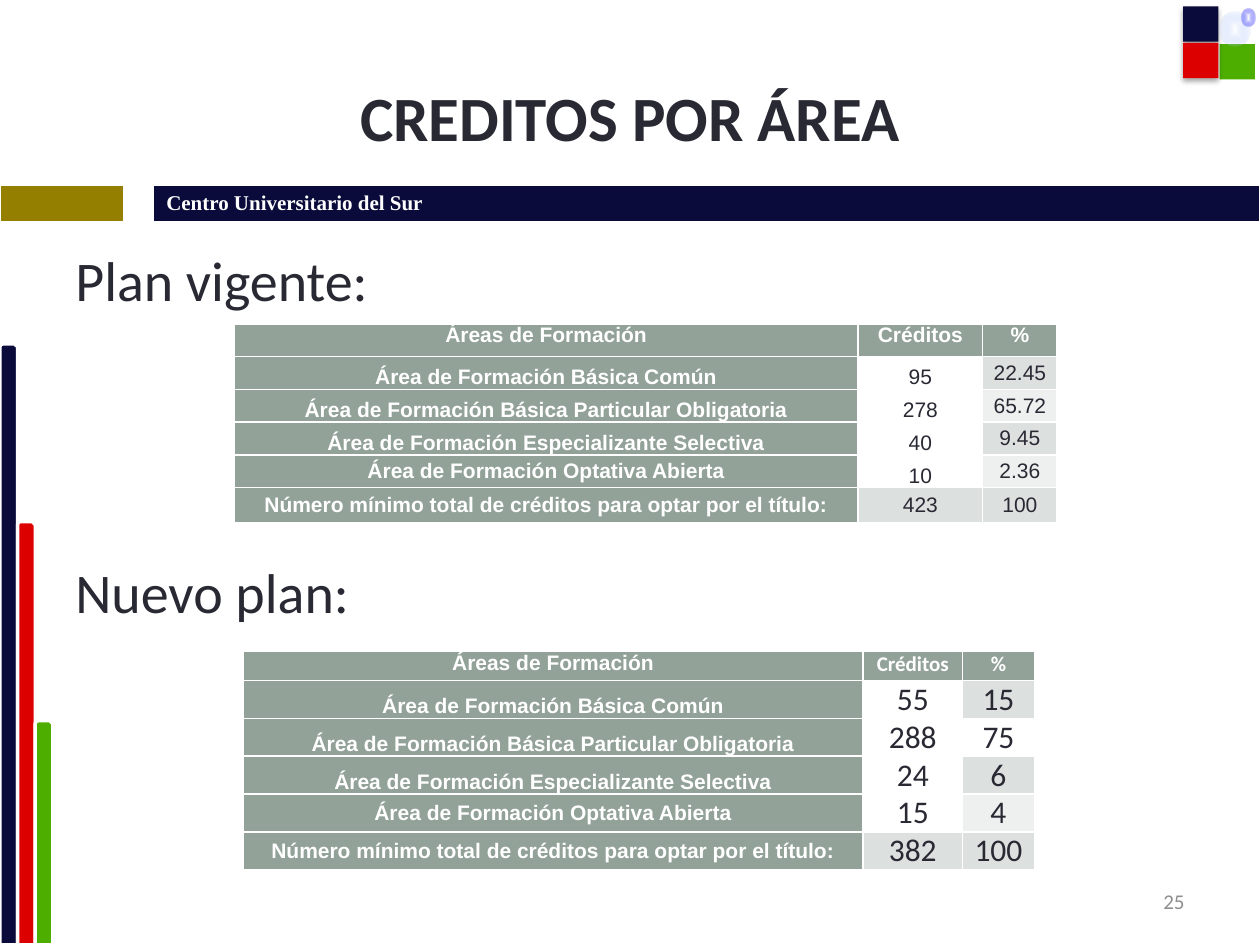
from dataclasses import dataclass
from typing import Optional

from lxml import etree
from pptx import Presentation
from pptx.dml.color import RGBColor
from pptx.enum.shapes import MSO_SHAPE
from pptx.enum.text import MSO_ANCHOR, PP_ALIGN
from pptx.oxml import parse_xml
from pptx.oxml.ns import nsdecls, qn
from pptx.util import Inches, Pt

LEFT, CENTER, RIGHT = PP_ALIGN.LEFT, PP_ALIGN.CENTER, PP_ALIGN.RIGHT
TOP, MIDDLE, BOTTOM = MSO_ANCHOR.TOP, MSO_ANCHOR.MIDDLE, MSO_ANCHOR.BOTTOM
BAR, SQUARE, OVAL = MSO_SHAPE.SNIP_ROUND_RECTANGLE, MSO_SHAPE.RECTANGLE, MSO_SHAPE.OVAL
COLORS = {
    "white": "FFFFFF", "ink": "292934", "gray": "8E8E90", "navy": "0A0B3A",
    "red": "DC0000", "green": "4DAE00", "olive": "947F00", "sage": "93A299",
    "band": "DCE0DE", "light": "EEF0EF", "sky": "A8C1FA", "blue": "0000FF",
}
AREAS = [
    "Área de Formación Básica Común",
    "Área de Formación Básica Particular Obligatoria",
    "Área de Formación Especializante Selectiva",
    "Área de Formación Optativa Abierta",
    "Número mínimo total de créditos para optar por el título:",
]


@dataclass
class Style:
    size: float
    color: str = "ink"
    font: str = "Calibri"
    bold: bool = False
    align: PP_ALIGN = LEFT


@dataclass
class Mark:
    kind: MSO_SHAPE
    left: float
    top: float
    width: float
    height: float
    color: str
    outlined: bool = False
    shadow: bool = False
    glow: Optional[int] = None  # opacity of the rim, in percent


@dataclass
class Plan:
    left: float
    top: float
    columns: list[float]
    rows: list[float]
    credits: list[str]
    shares: list[str]
    share_fills: list[Optional[str]]
    heading: Style
    number: Style


def rgb(name: str) -> RGBColor:
    return RGBColor.from_string(COLORS[name])


def write(para, text: str, style: Style) -> None:
    para.text = text
    para.alignment = style.align
    font = para.font
    font.name, font.size, font.bold = style.font, Pt(style.size), style.bold
    font.color.rgb = rgb(style.color)


def draw_mark(page, mark: Mark) -> None:
    shape = page.shapes.add_shape(mark.kind, Inches(mark.left), Inches(mark.top),
                                  Inches(mark.width), Inches(mark.height))
    shape.shadow.inherit = False
    if mark.glow is None:
        shape.fill.solid()
        shape.fill.fore_color.rgb = rgb(mark.color)
    else:
        shape.fill.gradient()
        stops = shape.fill.gradient_stops
        stops[0].color.rgb, stops[1].color.rgb = rgb("white"), rgb(mark.color)
        gradient = shape._element.spPr.find(qn("a:gradFill"))
        rim = gradient.findall(".//" + qn("a:srgbClr"))[1]
        etree.SubElement(rim, qn("a:alpha")).set("val", str(mark.glow * 1000))
        gradient.replace(gradient.find(qn("a:lin")), parse_xml(
            f'<a:path {nsdecls("a")} path="shape">'
            '<a:fillToRect l="50000" t="50000" r="50000" b="50000"/></a:path>'))
    if mark.outlined:
        shape.line.color.rgb = rgb("white")
        shape.line.width = Pt(2)
    else:
        shape.line.fill.background()
    if mark.shadow:
        shape._element.spPr.find(qn("a:effectLst")).append(parse_xml(
            f'<a:outerShdw {nsdecls("a")} blurRad="{Pt(3.1)}" dist="{Pt(1.8)}" '
            'dir="5400000" rotWithShape="0"><a:srgbClr val="000000">'
            '<a:alpha val="35000"/></a:srgbClr></a:outerShdw>'))


def add_grid(page, left: float, top: float, columns: list[float], rows: list[float]):
    table = page.shapes.add_table(
        len(rows), len(columns), Inches(left), Inches(top),
        Inches(sum(columns)), Inches(sum(rows))).table
    table.horz_banding = False
    for column, width in zip(table.columns, columns):
        column.width = Inches(width)
    for row, height in zip(table.rows, rows):
        row.height = Inches(height)
    return table


def fill_cell(cell, text: str, style: Style, fill: Optional[str],
              anchor: MSO_ANCHOR, margin: float = 0.07):
    cell.margin_left = cell.margin_right = Inches(margin)
    cell.margin_top = cell.margin_bottom = 0
    cell.vertical_anchor = anchor
    if fill:
        cell.fill.solid()
        cell.fill.fore_color.rgb = rgb(fill)
    else:
        cell.fill.background()
    para = cell.text_frame.paragraphs[0]
    write(para, text, style)
    return para


def draw_plan(page, plan: Plan) -> None:
    table = add_grid(page, plan.left, plan.top, plan.columns, plan.rows)
    label = Style(12, "white", "Arial", True, CENTER)
    headings = [("Áreas de Formación", label), ("Créditos", plan.heading), ("%", plan.heading)]
    for column, (text, style) in enumerate(headings):
        fill_cell(table.cell(0, column), text, style, "sage", TOP)
    body = zip(AREAS, plan.credits, plan.shares, plan.share_fills)
    for row, (area, credit, share, share_fill) in enumerate(body, start=1):
        total = row == len(AREAS)
        fill_cell(table.cell(row, 0), area, label, "sage", BOTTOM if row < 4 else MIDDLE)
        para = fill_cell(table.cell(row, 1), credit, plan.number,
                         "band" if total else None, MIDDLE if total else BOTTOM)
        para.space_before, para.space_after = (Pt(4), Pt(4)) if total else (Pt(3), Pt(2))
        fill_cell(table.cell(row, 2), share, plan.number, share_fill, MIDDLE)


def add_text(page, left: float, top: float, width: float, height: float,
             lines: list[str], style: Style, anchor: MSO_ANCHOR, gap: float = 0) -> None:
    box = page.shapes.add_textbox(Inches(left), Inches(top), Inches(width), Inches(height))
    frame = box.text_frame
    frame.word_wrap = True
    frame.vertical_anchor = anchor
    for index, line in enumerate(lines):
        para = frame.add_paragraph() if index else frame.paragraphs[0]
        write(para, line, style)
        if index:
            para.space_before = Pt(gap)


def main() -> None:
    deck = Presentation()
    deck.slide_width, deck.slide_height = Inches(10), Inches(7.5)
    page = deck.slides.add_slide(deck.slide_layouts[5])

    # Title
    title = page.shapes.title
    title.left, title.top, title.width, title.height = map(Inches, (0.5, 0.3, 9, 1.25))
    title.text_frame.vertical_anchor = MIDDLE
    write(title.text_frame.paragraphs[0], "CREDITOS POR ÁREA",
          Style(36, bold=True, align=CENTER))

    # Band with the name of the centre
    band = add_grid(page, 0, 1.47, [0.98, 0.24, 8.78], [0.29])
    band_style = Style(12, "white", "Times New Roman", True)
    band_cells = [("", "olive"), ("", None), ("Centro Universitario del Sur", "navy")]
    for column, (text, fill) in enumerate(band_cells):
        fill_cell(band.cell(0, column), text, band_style, fill, MIDDLE, 0.1)

    # Side bars reaching the bottom edge
    bars = [("navy", 2.73), ("red", 4.14), ("green", 5.72)]
    for index, (color, top) in enumerate(bars):
        draw_mark(page, Mark(BAR, 0.14 * index, top, 0.14, 7.5 - top, color, outlined=True))

    # Corner ornament
    for mark in (
        Mark(SQUARE, 9.68, 0.35, 0.28, 0.28, "green"),
        Mark(SQUARE, 9.39, 0.05, 0.28, 0.28, "navy", shadow=True),
        Mark(SQUARE, 9.39, 0.34, 0.28, 0.28, "red", shadow=True),
        Mark(OVAL, 9.68, 0.09, 0.24, 0.28, "sky", glow=10),
        Mark(OVAL, 9.85, 0.07, 0.11, 0.14, "blue", glow=20),
    ):
        draw_mark(page, mark)

    # Plan headings and page number
    add_text(page, 0.5, 1.9, 9, 4.91, ["Plan vigente:", "Nuevo plan:"], Style(32), TOP, gap=140)
    add_text(page, 7.17, 6.95, 2.33, 0.4, ["25"], Style(12, "gray", align=RIGHT), MIDDLE)

    # Credit tables
    draw_plan(page, Plan(
        1.93, 5.17, [4.92, 0.79, 0.57], [0.23] + [0.3] * 5,
        ["55", "288", "24", "15", "382"], ["15", "75", "6", "4", "100"],
        ["band", None, "band", "light", "band"],
        Style(12, "white", bold=True, align=CENTER), Style(18, align=CENTER)))
    draw_plan(page, Plan(
        1.86, 2.57, [4.95, 0.99, 0.59], [0.26] * 5 + [0.28],
        ["95", "278", "40", "10", "423"], ["22.45", "65.72", "9.45", "2.36", "100"],
        ["band", "light", "band", "light", "band"],
        Style(12, "white", "Arial", True, CENTER), Style(12, font="Arial", align=CENTER)))

    deck.save("out.pptx")


if __name__ == "__main__":
    main()
